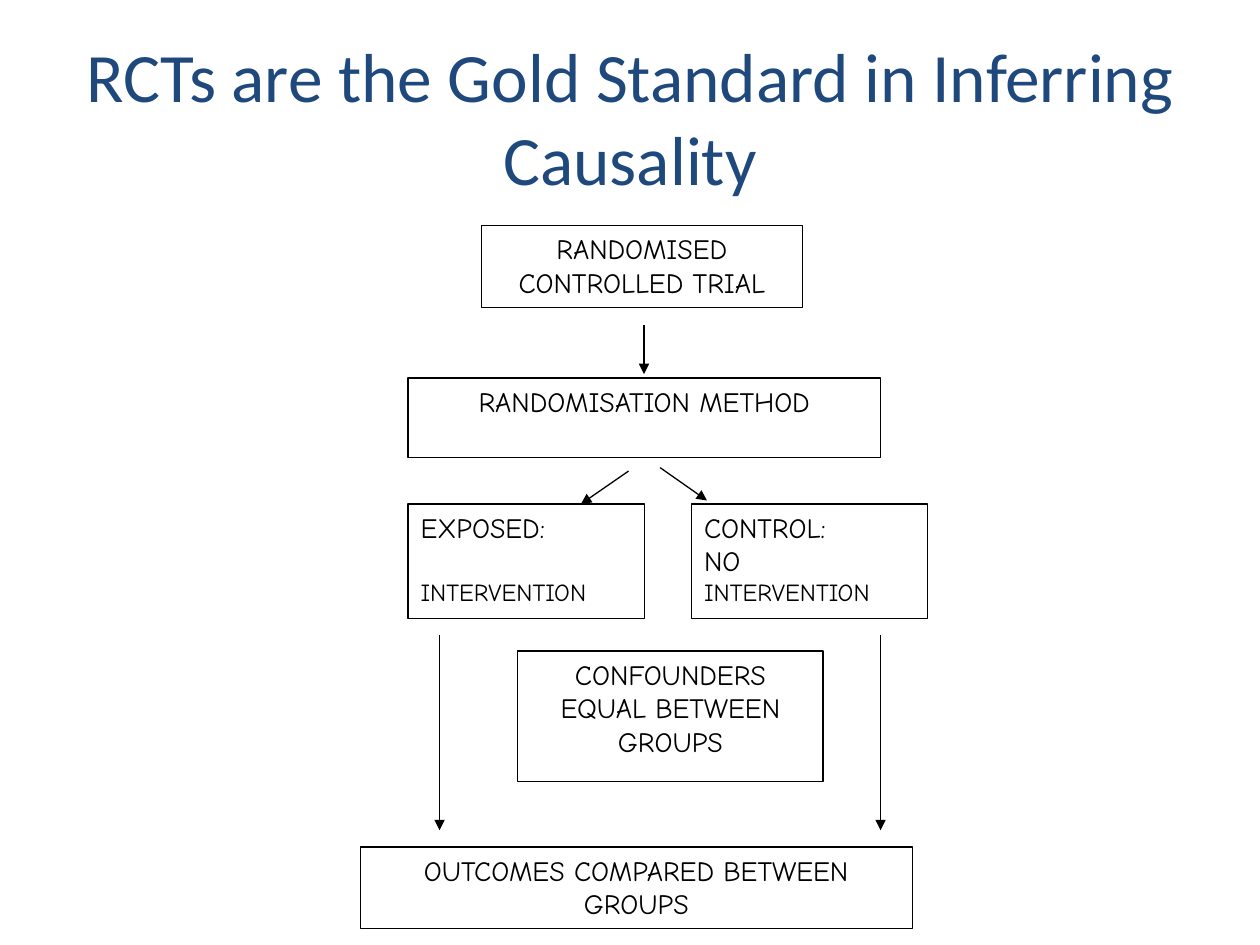
from pptx import Presentation
from pptx.dml.color import RGBColor as Rgb
from pptx.enum.shapes import MSO_CONNECTOR as Conn, MSO_SHAPE as Kind
from pptx.enum.text import MSO_ANCHOR as Anchor, PP_ALIGN as Align
from pptx.oxml.ns import qn
from pptx.util import Pt
from lxml.etree import SubElement as Sub

HUES = {"title": "1F497D", "ink": "000000", "paper": "FFFFFF"}


class Chart:
    """Draw a flow chart in one style on one slide."""

    def __init__(self, slide):
        self.slide = slide
        self.face = "Comic Neue"
        self.size = 16
        self.small = 14
        self.line = 0.75

    def hue(self, name):
        return Rgb.from_string(HUES[name])

    def style(self, para, face, size, hue, align):
        para.alignment = align
        para.font.name = face
        para.font.size = Pt(size)
        para.font.color.rgb = self.hue(hue)

    def title(self, text, *place):
        box = self.slide.shapes.add_textbox(*map(Pt, place))
        frame = box.text_frame
        frame.word_wrap = True
        frame.vertical_anchor = Anchor.MIDDLE
        frame.text = text
        self.style(frame.paragraphs[0], "Calibri", 39.6, "title", Align.CENTER)

    def box(self, text, *place):
        shape = self.slide.shapes.add_shape(Kind.RECTANGLE, *map(Pt, place))
        shape.shadow.inherit = False
        shape.fill.solid()
        shape.fill.fore_color.rgb = self.hue("paper")
        shape.line.color.rgb = self.hue("ink")
        shape.line.width = Pt(self.line)
        frame = shape.text_frame
        frame.word_wrap = True
        frame.vertical_anchor = Anchor.TOP
        frame.text = text
        self.style(frame.paragraphs[0], self.face, self.size, "ink", Align.CENTER)
        return frame

    def group(self, head, lead, gap, *place):
        frame = self.box(head, *place)
        frame.paragraphs[0].alignment = Align.LEFT
        para = frame.add_paragraph()
        size = self.size if lead else self.small
        self.style(para, self.face, size, "ink", Align.LEFT)
        para.space_before = Pt(gap)
        if lead:
            para.add_run().text = lead
        run = para.add_run()
        run.text = "INTERVENTION"
        if lead:
            run.font.size = Pt(self.small)

    def arrow(self, *ends):
        link = self.slide.shapes.add_connector(Conn.STRAIGHT, *map(Pt, ends))
        link.line.color.rgb = self.hue("ink")
        link.line.width = Pt(self.line)
        Sub(link.line._get_or_add_ln(), qn("a:tailEnd"), type="triangle")
        Sub(link._element.spPr, qn("a:effectLst"))


def main():
    deck = Presentation()
    deck.slide_width, deck.slide_height = Pt(720), Pt(540)
    chart = Chart(deck.slides.add_slide(deck.slide_layouts[6]))
    chart.title("RCTs are the Gold Standard in Inferring Causality", 36, 21.6, 648, 90)
    for text, *place in (
        ("RANDOMISED CONTROLLED TRIAL", 275, 128.8, 183.6, 46.8),
        ("RANDOMISATION METHOD", 233.2, 216, 270, 45.5),
        ("CONFOUNDERS EQUAL BETWEEN GROUPS", 295.9, 372, 174.5, 74.8),
        ("OUTCOMES COMPARED BETWEEN GROUPS", 205.9, 484, 315.4, 46.8),
    ):
        chart.box(text, *place)
    for head, lead, gap, left in (
        ("EXPOSED:", "", 19.2, 233.2),
        ("CONTROL:", "NO ", 0, 395.2),
    ):
        chart.group(head, lead, gap, left, 288, 135, 65.5)
    for ends in (
        (368, 185.8, 368, 213.8),
        (359.2, 269.2, 332, 288),
        (377.2, 267.2, 404, 286),
    ):
        chart.arrow(*ends)
    for left in (251.2, 503.2):
        chart.arrow(left, 362.8, left, 474.5)
    deck.save("out.pptx")


if __name__ == "__main__":
    main()
